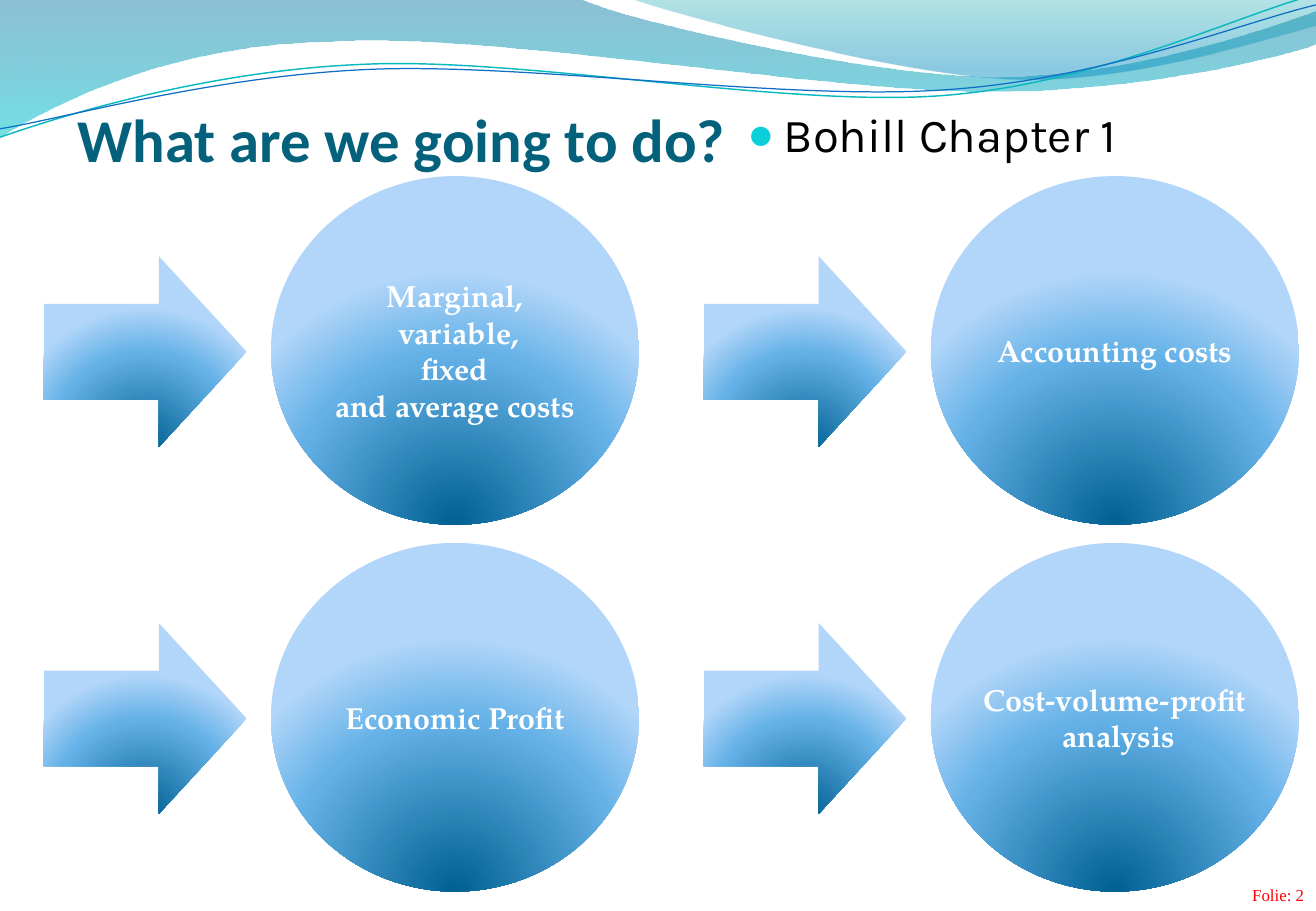
from lxml import etree
from pptx import Presentation
from pptx.dml.color import RGBColor
from pptx.enum.shapes import MSO_SHAPE
from pptx.enum.text import MSO_ANCHOR, MSO_AUTO_SIZE, PP_ALIGN
from pptx.oxml.ns import qn
from pptx.util import Inches, Pt

ELLIPSE, RIGHT_ARROW = MSO_SHAPE.OVAL, MSO_SHAPE.RIGHT_ARROW
LEFT, CENTER, RIGHT = PP_ALIGN.LEFT, PP_ALIGN.CENTER, PP_ALIGN.RIGHT
TOP, MIDDLE, BOTTOM = MSO_ANCHOR.TOP, MSO_ANCHOR.MIDDLE, MSO_ANCHOR.BOTTOM

SLIDE_W, SLIDE_H = 10.83, 7.5
BLACK = RGBColor(0x00, 0x00, 0x00)
WHITE = RGBColor(0xFF, 0xFF, 0xFF)
RED = RGBColor(0xFF, 0x00, 0x00)
TITLE_TEAL = RGBColor(0x04, 0x61, 0x7B)
BULLET_CYAN = RGBColor(0x0B, 0xD0, 0xD9)
LINE_TEAL = RGBColor(0x0A, 0xB8, 0xBF)
LINE_BLUE = RGBColor(0x0F, 0x6F, 0xC6)

# Gradient stops: position %, colour, opacity %
BALL_STOPS = [(0, RGBColor(0x00, 0x60, 0x91), 100),
              (68, RGBColor(0x64, 0xB1, 0xE7), 100),
              (100, RGBColor(0xB1, 0xD6, 0xF9), 100)]
WIDE_STOPS = [(0, RGBColor(0x00, 0x74, 0xA1), 45),
              (100, RGBColor(0x00, 0xC6, 0xCF), 55)]
CORNER_STOPS = [(0, RGBColor(0x00, 0xA1, 0xA9), 30),
                (80, RGBColor(0x00, 0x8B, 0xBF), 45)]

# Wave outlines in hundredths of an inch:
# a pair is a straight step, six numbers are a Bezier curve
UNIT = Inches(0.01)
WIDE_WAVE = [(0, 0), (477, -1), (515, 17, 719, 63, 822, 63),
             (924, 63, 1038, 26, 1083, 9), (1084, 36),
             (1065, 44, 942, 76, 808, 75), (674, 75, 414, 28, 279, 34),
             (140, 36, 50, 83, -1, 113)]
CORNER_WAVE = [(519, -1), (552, 11, 739, 62, 833, 65),
               (927, 69, 1042, 32, 1083, 21), (1083, 0)]
TEAL_WAVE = [(0, 113), (52, 95, 171, 58, 300, 53),
             (428, 47, 642, 88, 772, 79), (902, 70, 1017, 13, 1081, -4)]
BLUE_WAVE = [(0, 106), (51, 98, 177, 62, 307, 57),
             (436, 52, 647, 83, 776, 74), (906, 66, 1020, 19, 1083, 4)]

# Topic grid: each cell holds an arrow and a ball
GRID_LEFT, GRID_TOP = 0.36, 1.45
COL_PITCH, ROW_PITCH = 5.43, 3.02
ARROW_W, ARROW_H, ARROW_DROP = 1.67, 1.57, 0.66
BALL_W, BALL_H, BALL_SHIFT = 3.03, 2.87, 1.87
# Topic text, column, row
TOPICS = [("Accounting costs", 1, 0),
          ("Cost-volume-profit\n analysis", 1, 1),
          ("Economic Profit", 0, 1),
          ("Marginal,\n variable,\nfixed\nand average costs", 0, 0)]


def place(shape, left, top, width, height):
    shape.left, shape.top = Inches(left), Inches(top)
    shape.width, shape.height = Inches(width), Inches(height)


def write(shape, text, *, font, size, color, bold=False, align=LEFT,
          anchor=TOP, wrap=True, insets=(0.1, 0.05, 0.1, 0.05)):
    """Fill a shape with one formatted paragraph and return the paragraph."""
    frame = shape.text_frame
    frame.auto_size = MSO_AUTO_SIZE.NONE
    frame.word_wrap = wrap
    frame.vertical_anchor = anchor
    (frame.margin_left, frame.margin_top,
     frame.margin_right, frame.margin_bottom) = map(Inches, insets)
    paragraph = frame.paragraphs[0]
    paragraph.alignment = align
    paragraph.space_before = Pt(0)
    for number, line in enumerate(text.split("\n")):
        if number:
            paragraph.add_line_break()
        run = paragraph.add_run()
        run.text = line
        run.font.name, run.font.size = font, Pt(size)
        run.font.bold, run.font.color.rgb = bold, color
    return paragraph


def add_bullet(paragraph, color, indent):
    properties = paragraph._p.get_or_add_pPr()
    properties.set("marL", str(Inches(indent)))
    properties.set("indent", str(-Inches(indent)))
    tint = etree.SubElement(properties, qn("a:buClr"))
    etree.SubElement(tint, qn("a:srgbClr"), val=str(color))
    etree.SubElement(properties, qn("a:buSzPct"), val="95000")
    etree.SubElement(properties, qn("a:buChar"), char="●")


def fill_gradient(shape, stops, radial=False):
    """Top-to-bottom gradient, or a radial one centred below the shape."""
    shape.shadow.inherit = False
    shape.line.fill.background()
    shape.fill.gradient()
    gradient = shape._element.spPr.find(qn("a:gradFill"))
    for child in list(gradient):
        gradient.remove(child)
    stop_list = etree.SubElement(gradient, qn("a:gsLst"))
    for position, color, opacity in stops:
        stop = etree.SubElement(stop_list, qn("a:gs"), pos=str(position * 1000))
        tint = etree.SubElement(stop, qn("a:srgbClr"), val=str(color))
        if opacity < 100:
            etree.SubElement(tint, qn("a:alpha"), val=str(opacity * 1000))
    if radial:
        circle = etree.SubElement(gradient, qn("a:path"), path="circle")
        etree.SubElement(circle, qn("a:fillToRect"),
                         l="50000", t="130000", r="50000", b="-30000")
    else:
        etree.SubElement(gradient, qn("a:lin"), ang="5400000", scaled="1")


def add_wave(shapes, outline, closed):
    """Build an outline, then join each curve's three steps into one Bezier."""
    start, *steps = outline
    builder = shapes.build_freeform(*start, scale=UNIT)
    builder.add_line_segments([step[i:i + 2] for step in steps
                               for i in range(0, len(step), 2)], close=closed)
    wave = builder.convert_to_shape()
    segments = iter(list(wave._element.iter(qn("a:lnTo"))))
    for step in steps:
        first = next(segments)
        if len(step) == 6:
            first.tag = qn("a:cubicBezTo")
            for _ in range(2):
                control = next(segments)
                first.append(control[0])
                control.getparent().remove(control)
    return wave


def add_wave_line(shapes, outline, color, width):
    wave = add_wave(shapes, outline, closed=False)
    wave.shadow.inherit = False
    wave.fill.background()
    wave.line.color.rgb, wave.line.width = color, Pt(width)


def add_topic(slide, text, column, row):
    left = GRID_LEFT + column * COL_PITCH
    top = GRID_TOP + row * ROW_PITCH
    topic = slide.shapes.add_group_shape().shapes
    ball = topic.add_shape(ELLIPSE, Inches(left + BALL_SHIFT), Inches(top),
                           Inches(BALL_W), Inches(BALL_H))
    arrow = topic.add_shape(RIGHT_ARROW, Inches(left), Inches(top + ARROW_DROP),
                            Inches(ARROW_W), Inches(ARROW_H))
    arrow.adjustments[0], arrow.adjustments[1] = 0.5, 0.46
    for part in (ball, arrow):
        fill_gradient(part, BALL_STOPS, radial=True)
    write(ball, text, font="TeX Gyre Pagella", size=18, color=WHITE, bold=True,
          align=CENTER, anchor=MIDDLE, wrap=False)


def main():
    deck = Presentation()
    deck.slide_width, deck.slide_height = Inches(SLIDE_W), Inches(SLIDE_H)
    slide = deck.slides.add_slide(deck.slide_layouts[1])
    title, reading = slide.placeholders

    # Waves along the top edge
    fill_gradient(add_wave(slide.shapes, WIDE_WAVE, closed=True), WIDE_STOPS)
    fill_gradient(add_wave(slide.shapes, CORNER_WAVE, closed=True), CORNER_STOPS)
    wave_lines = slide.shapes.add_group_shape().shapes
    add_wave_line(wave_lines, TEAL_WAVE, LINE_TEAL, 0.85)
    add_wave_line(wave_lines, BLUE_WAVE, LINE_BLUE, 0.75)

    # Page number
    page = slide.shapes.add_textbox(0, 0, 0, 0)
    place(page, SLIDE_W - 3.52, SLIDE_H - 0.27, 3.52, 0.27)
    write(page, "Folie: 2", font="Times New Roman", size=10, color=RED, align=RIGHT)

    # Title and reading, in front of the waves
    for placeholder in (reading, title):
        slide.shapes._spTree.append(placeholder._element)
    place(title, 0.64, 0.72, 5.45, 0.72)
    write(title, "What are we going to do?", font="Calibri", size=36,
          color=TITLE_TEAL, bold=True, anchor=BOTTOM, insets=(0, 0.05, 0, 0))
    place(reading, 6.11, 0.83, SLIDE_W - 6.11, 0.55)
    chapter = write(reading, "Bohill Chapter 1", font="Karla", size=28,
                    color=BLACK, insets=(0.04,) * 4)
    add_bullet(chapter, BULLET_CYAN, 0.3)

    # Topics
    for text, column, row in TOPICS:
        add_topic(slide, text, column, row)

    deck.save("out.pptx")


if __name__ == "__main__":
    main()
